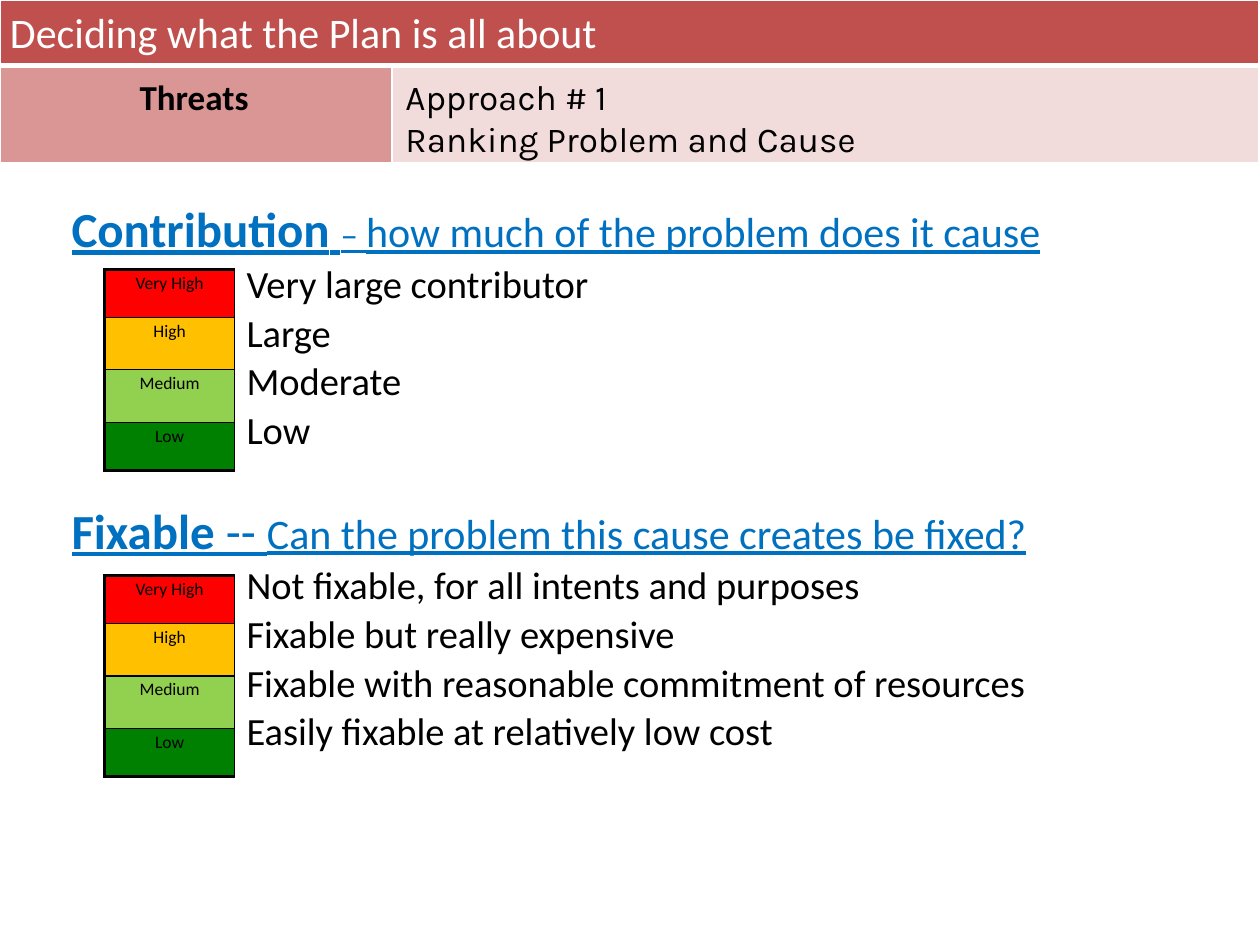
from lxml.etree import SubElement
from pptx import Presentation
from pptx.dml.color import RGBColor
from pptx.enum.text import PP_ALIGN as Align
from pptx.oxml.ns import qn
from pptx.util import Pt

rgb = RGBColor.from_string


def paint_cell(cell, fill, line_color, left, right, top, bottom):
    properties = cell._tc.get_or_add_tcPr()
    for side, width in zip("LRTB", (left, right, top, bottom)):
        line = SubElement(properties, qn(f"a:ln{side}"), w=str(Pt(width)))
        solid = SubElement(line, qn("a:solidFill"))
        SubElement(solid, qn("a:srgbClr"), val=line_color)
    cell.fill.solid()
    cell.fill.fore_color.rgb = rgb(fill)


def add_run(paragraph, text, size, color="000000", bold=False, underline=False, font="Calibri"):
    run = paragraph.add_run()
    run.text = text
    run.font.name = font
    run.font.size = Pt(size)
    run.font.color.rgb = rgb(color)
    run.font.bold = bold
    run.font.underline = underline


prs = Presentation()
prs.slide_width = Pt(720)
prs.slide_height = Pt(540)
slide = prs.slides.add_slide(prs.slide_layouts[6])
shapes = slide.shapes

banner = shapes.add_table(2, 2, 0, 0, Pt(719.3), Pt(92.9)).table
for column, width in zip(banner.columns, (223.9, 495.4)):
    column.width = Pt(width)
for row, height in zip(banner.rows, (37.4, 55.5)):
    row.height = Pt(height)
banner.cell(0, 0).merge(banner.cell(0, 1))
for column in range(2):
    paint_cell(banner.cell(0, column), "C0504D", "FFFFFF", 1, 1, 1, 3)
    paint_cell(banner.cell(1, column), ("D99694", "F2DCDB")[column], "FFFFFF", 1, 1, 3, 1)

headings = [
    (-1.4, 0, 718.6, 36.7, ["Deciding what the Plan is all about"], 24, "FFFFFF", False, "Calibri", Align.LEFT),
    (0, 39.6, 221.8, 51.1, ["Threats"], 20, "000000", True, "Calibri", Align.CENTER),
    (224.6, 39.6, 495.4, 51.1, ["Approach # 1", "Ranking Problem and Cause"], 20, "000000", False, "Karla", Align.LEFT),
]
for left, top, width, height, lines, size, color, bold, font, align in headings:
    frame = shapes.add_textbox(Pt(left), Pt(top), Pt(width), Pt(height)).text_frame
    frame.word_wrap = True
    for index, line in enumerate(lines):
        paragraph = frame.add_paragraph() if index else frame.paragraphs[0]
        paragraph.alignment = align
        add_run(paragraph, line, size, color, bold, font=font)

criteria = [
    (113.8, 3.6, 154.1,
     [("Contribution", 28, True), (" ", 28, False), ("– ", 20, False),
      ("how much of the problem does it cause", 24, False)],
     ["Very large contributor", "Large", "Moderate", "Low"]),
    (275.8, 13.8, 329,
     [("Fixable ", 28, True), ("-- ", 28, False),
      ("Can the problem this cause creates be fixed?", 24, False)],
     ["Not fixable, for all intents and purposes", "Fixable but really expensive",
      "Fixable with reasonable commitment of resources", "Easily fixable at relatively low cost"]),
]
ratings = [
    ("Very High", "FF0000", 27.4, 2.25, 1),
    ("High", "FFC000", 29.8, 1, 1),
    ("Medium", "92D050", 30.2, 1, 1),
    ("Low", "008000", 27.4, 1, 2.25),
]
for top, inset, scale_top, question, answers in criteria:
    frame = shapes.add_textbox(Pt(33.8), Pt(top), Pt(642.2), Pt(210.2)).text_frame
    frame.word_wrap = True
    frame.margin_top = Pt(inset)
    title = frame.paragraphs[0]
    title.line_spacing = 0.9
    for text, size, bold in question:
        add_run(title, text, size, "0070C0", bold, True)
    for answer in answers:
        paragraph = frame.add_paragraph()
        paragraph.line_spacing = 0.9
        paragraph.space_before = Pt(4)
        paragraph._p.get_or_add_pPr().set("marL", str(Pt(100)))
        add_run(paragraph, answer, 22)

    scale = shapes.add_table(4, 1, Pt(59.8), Pt(scale_top), Pt(74.2), Pt(114.8)).table
    for index, (label, fill, height, line_above, line_below) in enumerate(ratings):
        scale.rows[index].height = Pt(height)
        cell = scale.cell(index, 0)
        cell.margin_left = cell.margin_right = Pt(1.4)
        cell.margin_top = cell.margin_bottom = 0
        paint_cell(cell, fill, "000000", 2.25, 1, line_above, line_below)
        paragraph = cell.text_frame.paragraphs[0]
        paragraph.alignment = Align.CENTER
        paragraph.line_spacing = 1.15
        add_run(paragraph, label, 10)

prs.save("out.pptx")
